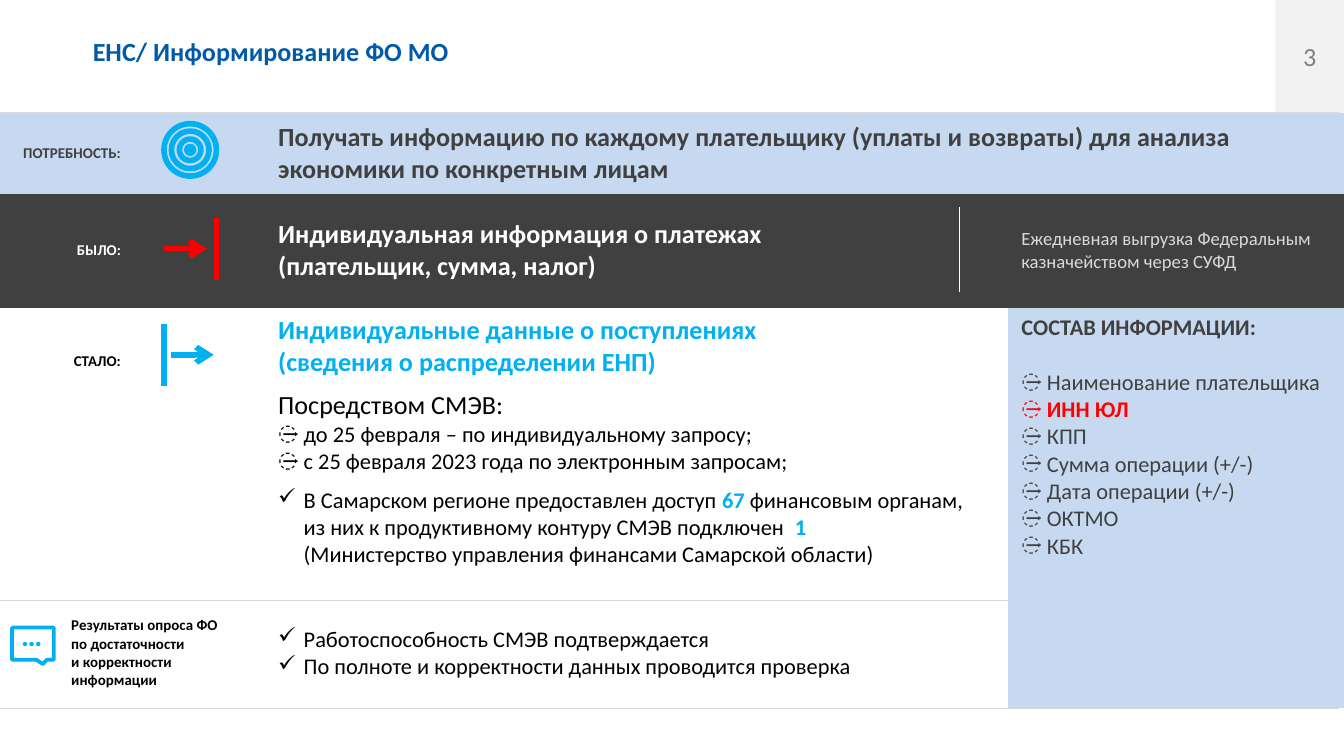
from dataclasses import dataclass
from typing import Optional

import lxml.etree
import pptx
import pptx.dml.color
import pptx.enum.shapes
import pptx.enum.text
import pptx.oxml.ns
import pptx.util

Inches = pptx.util.Inches
Pt = pptx.util.Pt
RGBColor = pptx.dml.color.RGBColor
Shapes = pptx.enum.shapes.MSO_SHAPE
Align = pptx.enum.text.PP_ALIGN
Anchor = pptx.enum.text.MSO_ANCHOR
qn = pptx.oxml.ns.qn

BLACK = RGBColor(0x00, 0x00, 0x00)
WHITE = RGBColor(0xFF, 0xFF, 0xFF)
DARK = RGBColor(0x40, 0x40, 0x40)
GRAY = RGBColor(0x80, 0x80, 0x80)
RULE = RGBColor(0xD9, 0xD9, 0xD9)
PALE = RGBColor(0xF2, 0xF2, 0xF2)
LIGHT_BLUE = RGBColor(0xC6, 0xD9, 0xF1)
TITLE_BLUE = RGBColor(0x00, 0x5A, 0xA9)
CYAN = RGBColor(0x00, 0xB0, 0xF0)
DOT_BLUE = RGBColor(0x4F, 0x81, 0xBD)
RED = RGBColor(0xFF, 0x00, 0x00)

DASH = "̶"
CHECK = "✓"
NO_GRID_STYLE = "{2D5ABB26-0587-4C30-8999-92F81FD0307C}"


@dataclass
class Span:
    text: str
    accent: bool = False


@dataclass
class Para:
    spans: list[Span]
    size: float
    color: RGBColor = BLACK
    bold: bool = False
    align: Align = Align.LEFT
    bullet: str = ""
    before: float = 0


@dataclass
class Cell:
    row: int
    column: int
    paras: list[Para]
    anchor: Anchor = Anchor.MIDDLE
    margin_left: float = 0.1
    margin_top: float = 0.05


@dataclass
class Line:
    start: tuple[float, float]
    end: tuple[float, float]
    color: RGBColor
    width: float = 0.75
    arrow: bool = False


def plain(text: str, size: float, color: RGBColor = BLACK, bold: bool = False, **options) -> Para:
    return Para([Span(text)], size, color, bold, **options)


def label(text: str, color: RGBColor) -> Para:
    return plain(text, 8, color, True, align=Align.RIGHT)


def write(frame, paras: list[Para]) -> None:
    for index, item in enumerate(paras):
        para = frame.paragraphs[0] if index == 0 else frame.add_paragraph()
        para.alignment = item.align
        if item.before:
            para.space_before = Pt(item.before)
        if item.bullet:
            properties = para._p.get_or_add_pPr()
            properties.set("marL", str(Inches(0.19)))
            properties.set("indent", str(-Inches(0.19)))
            lxml.etree.SubElement(properties, qn("a:buChar")).set("char", item.bullet)
        para.font.name = "Calibri"
        para.font.size = Pt(item.size)
        para.font.bold = item.bold
        para.font.color.rgb = item.color
        for span in item.spans:
            for number, text in enumerate(span.text.split("\n")):
                if number:
                    para.add_line_break()
                if not text:
                    continue
                run = para.add_run()
                run.text = text
                if span.accent:
                    run.font.bold = True
                    run.font.color.rgb = CYAN


def draw_line(page, line: Line) -> None:
    ends = [Inches(value) for value in (*line.start, *line.end)]
    connector = page.shapes.add_connector(pptx.enum.shapes.MSO_CONNECTOR.STRAIGHT, *ends)
    connector.line.color.rgb = line.color
    connector.line.width = Pt(line.width)
    if line.arrow:
        outline = connector.line._get_or_add_ln()
        lxml.etree.SubElement(outline, qn("a:tailEnd")).set("type", "arrow")
    lxml.etree.SubElement(connector._element.spPr, qn("a:effectLst"))


def draw_shape(page, kind: Shapes, place: tuple[float, float, float, float],
               fill: Optional[RGBColor] = None, outline: Optional[RGBColor] = None, width: float = 3):
    shape = page.shapes.add_shape(kind, *map(Inches, place))
    shape.shadow.inherit = False
    if fill is None:
        shape.fill.background()
    else:
        shape.fill.solid()
        shape.fill.fore_color.rgb = fill
    if outline is None:
        shape.line.fill.background()
    else:
        shape.line.color.rgb = outline
        shape.line.width = Pt(width)
    return shape


def draw_table(page, cells: list[Cell]) -> None:
    table = page.shapes.add_table(4, 4, 0, Inches(0.84), Inches(10), Inches(4.43)).table
    table.first_row = table.horz_banding = False
    table._tbl.tblPr.find(qn("a:tableStyleId")).text = NO_GRID_STYLE
    for column, width in zip(table.columns, (1, 0.97, 5.53, 2.5)):
        column.width = Inches(width)
    for row, height in zip(table.rows, (0.6, 0.85, 2.16, 0.82)):
        row.height = Inches(height)
    for number, fill in enumerate((LIGHT_BLUE, DARK, None, None)):
        for column in range(4):
            cell = table.cell(number, column)
            color = fill or (LIGHT_BLUE if column == 3 else None)
            if color is None:
                cell.fill.background()
            else:
                cell.fill.solid()
                cell.fill.fore_color.rgb = color
    for first, last in (((0, 2), (0, 3)), ((2, 3), (3, 3)), ((3, 0), (3, 1))):
        table.cell(*first).merge(table.cell(*last))
    for item in cells:
        cell = table.cell(item.row, item.column)
        cell.vertical_anchor = item.anchor
        cell.margin_left = Inches(item.margin_left)
        cell.margin_top = Inches(item.margin_top)
        write(cell.text_frame, item.paras)


NOW = [
    plain("Индивидуальные данные о поступлениях\n(сведения о распределении ЕНП)", 14, CYAN, True),
    plain("Посредством СМЭВ:", 14, before=6),
    plain("до 25 февраля – по индивидуальному запросу;", 12, bullet=DASH),
    plain("с 25 февраля 2023 года по электронным запросам;", 12, bullet=DASH),
    Para([Span("В Самарском регионе предоставлен доступ "), Span("67", True),
          Span(" финансовым органам,\nиз них к продуктивному контуру СМЭВ подключен "), Span(" 1", True),
          Span("\n(Министерство управления финансами Самарской области)")], 12, bullet=CHECK, before=6),
]
FIELDS = ["Наименование плательщика", "ИНН ЮЛ", "КПП", "Сумма операции (+/-)",
          "Дата операции (+/-)", "ОКТМО", "КБК"]
CONTENTS = [plain("СОСТАВ ИНФОРМАЦИИ:", 12, DARK, True)] + [
    plain(field, 12, RED if field == "ИНН ЮЛ" else DARK, field == "ИНН ЮЛ",
          bullet=DASH, before=0 if index else 14.6)
    for index, field in enumerate(FIELDS)
]
SURVEY = "Результаты опроса ФО\nпо достаточности\nи корректности\nинформации"
RESULTS = ["Работоспособность СМЭВ подтверждается", "По полноте и корректности данных проводится проверка"]
CELLS = [
    Cell(0, 0, [label("ПОТРЕБНОСТЬ:", DARK)]),
    Cell(0, 2, [plain("Получать информацию по каждому плательщику (уплаты и возвраты) для анализа "
                      "экономики по конкретным лицам", 14, DARK, True)]),
    Cell(1, 0, [label("БЫЛО:", WHITE)]),
    Cell(1, 2, [plain("Индивидуальная информация о платежах\n(плательщик, сумма, налог)", 14, WHITE, True)]),
    Cell(1, 3, [plain("Ежедневная выгрузка Федеральным казначейством через СУФД", 10, RULE)]),
    Cell(2, 0, [label("СТАЛО:", BLACK)], Anchor.TOP, margin_top=0.33),
    Cell(2, 2, NOW, Anchor.TOP),
    Cell(2, 3, CONTENTS, Anchor.TOP),
    Cell(3, 0, [plain(SURVEY, 8, bold=True)], margin_left=0.53),
    Cell(3, 2, [plain(text, 12, bullet=CHECK) for text in RESULTS]),
]
LINES = [
    Line((7.14, 1.54), (7.14, 2.17), WHITE),
    Line((1.61, 1.62), (1.61, 2.08), RED, 3),
    Line((1.22, 1.85), (1.54, 1.85), RED, 3, True),
    Line((1.22, 2.41), (1.22, 2.87), CYAN, 3),
    Line((1.27, 2.64), (1.59, 2.64), CYAN, 3, True),
] + [Line((0, y), (9.96, y), RULE) for y in (0.84, 5.27)]


def main() -> None:
    deck = pptx.Presentation()
    deck.slide_width = Inches(10)
    deck.slide_height = deck.slide_width * 9 // 16
    page = deck.slides.add_slide(deck.slide_layouts[5])

    title = page.shapes.title
    title.left, title.top, title.width, title.height = map(Inches, (0.59, 0.21, 2.87, 0.34))
    title.text_frame.word_wrap = False
    title.text_frame.auto_size = pptx.enum.text.MSO_AUTO_SIZE.NONE
    title.text_frame.vertical_anchor = Anchor.TOP
    write(title.text_frame, [plain("ЕНС/ Информирование ФО МО", 14, TITLE_BLUE, True)])

    number = draw_shape(page, Shapes.RECTANGLE, (9.49, 0, 0.51, 0.84), PALE)
    write(number.text_frame, [plain("3", 14, GRAY, align=Align.CENTER)])

    draw_line(page, Line((0, 4.47), (9.96, 4.47), RULE))
    draw_table(page, CELLS)
    for line in LINES:
        draw_line(page, line)

    for size, fill in ((0.05, DOT_BLUE), (0.16, None), (0.28, None), (0.39, None)):
        draw_shape(page, Shapes.OVAL, (1.415 - size / 2, 1.115 - size / 2, size, size), fill, CYAN)

    callout = draw_shape(page, Shapes.RECTANGULAR_CALLOUT, (0.09, 4.67, 0.31, 0.24), None, CYAN, 2)
    callout.adjustments[0], callout.adjustments[1] = 0.24, 0.63
    box = page.shapes.add_textbox(*map(Inches, (0.06, 4.54, 0.37, 0.37)))
    box.text_frame.word_wrap = False
    write(box.text_frame, [plain("…", 16, CYAN, True)])
    deck.save("out.pptx")


if __name__ == "__main__":
    main()
